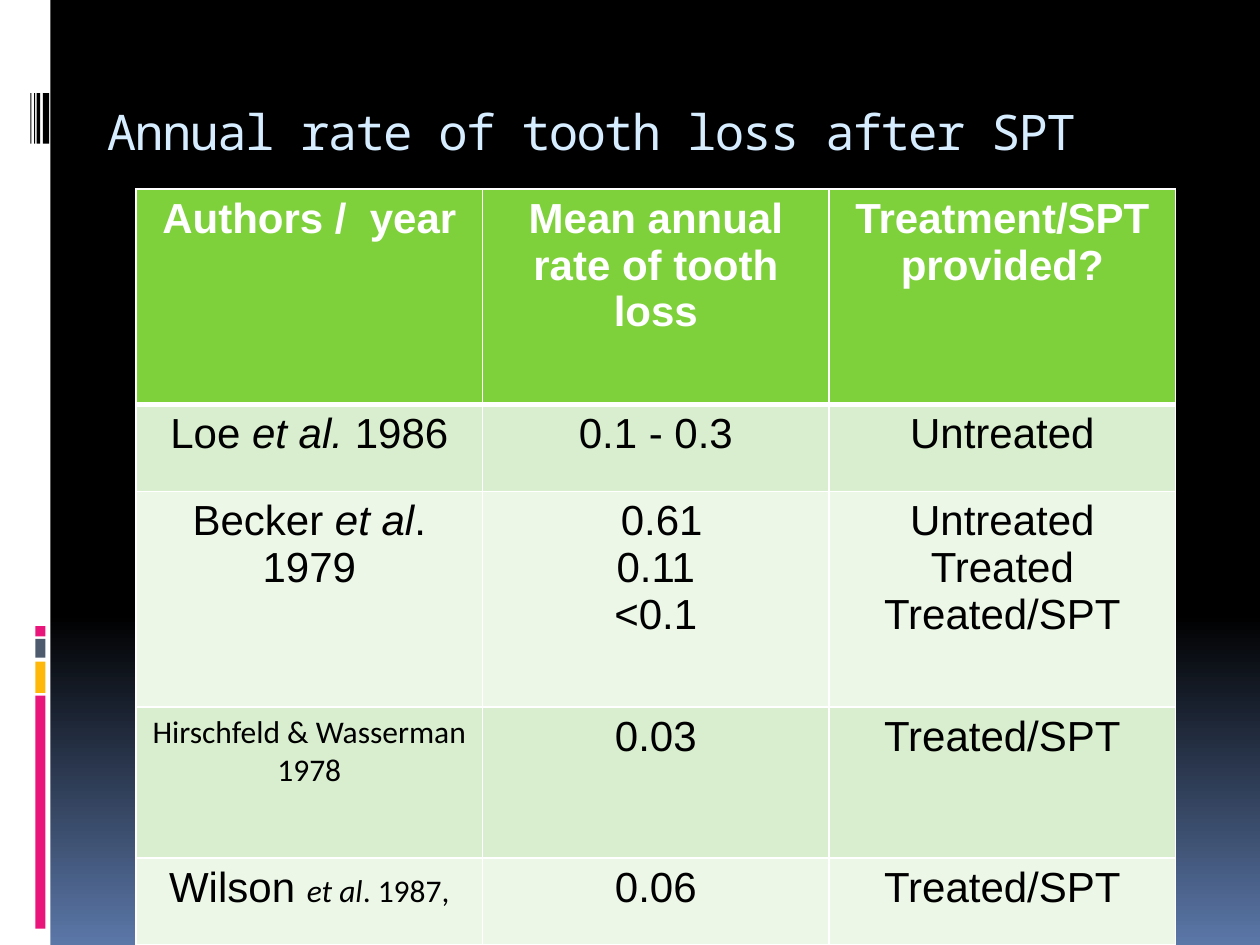
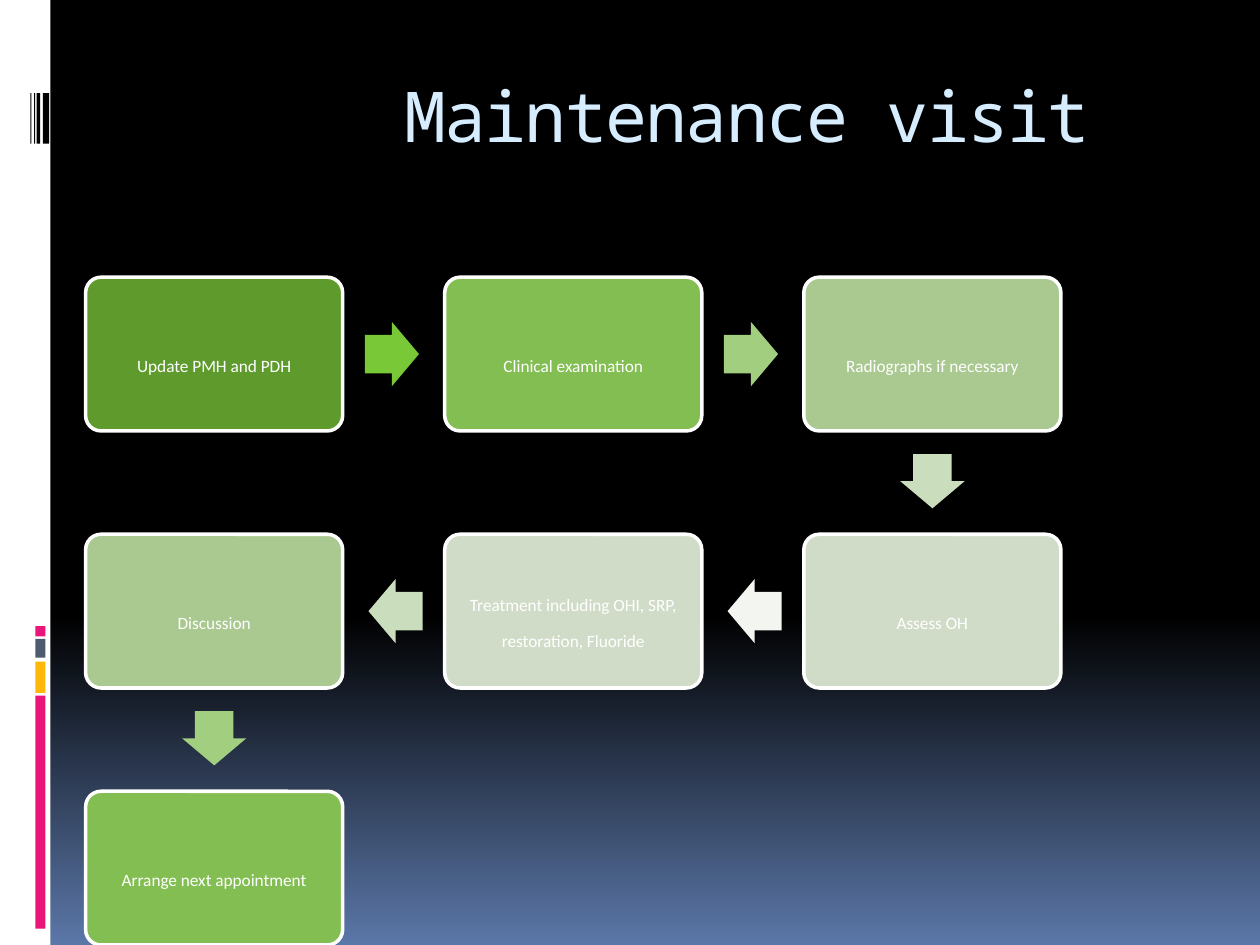
from pptx import Presentation
from pptx.dml.color import RGBColor
from pptx.enum.shapes import MSO_SHAPE
from pptx.enum.text import MSO_ANCHOR, PP_ALIGN
from pptx.oxml import parse_xml
from pptx.oxml.ns import nsdecls
from pptx.util import Inches, Pt

RECT = MSO_SHAPE.RECTANGLE
ROUNDED = MSO_SHAPE.ROUNDED_RECTANGLE
ARROW = MSO_SHAPE.RIGHT_ARROW
MIDDLE = MSO_ANCHOR.MIDDLE
CENTER = PP_ALIGN.CENTER

COLORS = {
    "white": "FFFFFF", "black": "000000", "sky": "5B77A8", "title": "D6ECFF",
    "pink": "EA157A", "amber": "FEB80A", "slate": "4E5B6F",
    "header": "7FD13B", "band": "D8EECE", "band_light": "ECF7E8",
    "green1": "5E9B2C", "green2": "82BE52", "green3": "A9C990", "green4": "D0DCC7",
    "arrow1": "79C838", "arrow2": "A2CE7F", "arrow3": "CADDBC", "arrow4": "F3F5F0",
}
TITLE_FONT = "Noto Sans Mono"
BODY = ("Arial", 24)
SMALL = ("Calibri", 18)

RAIL_BARS = [
    (0, 0, 0.4, 7.5, "white"),
    (0.28, 5.52, 0.08, 1.85, "pink"),
    (0.28, 5.25, 0.08, 0.25, "amber"),
    (0.28, 5.07, 0.08, 0.15, "slate"),
    (0.28, 4.97, 0.08, 0.08, "pink"),
    (0.34, 0.74, 0.05, 0.4, "black"),
    (0.29, 0.74, 0.03, 0.4, "black"),
    (0.27, 0.74, 0.01, 0.4, "black"),
    (0.24, 0.74, 0.01, 0.4, "black"),
]

COL_WIDTH = 2.75
ROW_HEIGHTS = [1.71, 0.69, 1.71, 1.2, 0.69]
ROWS = [
    ["Authors /  year", "Mean annual rate of tooth loss", "Treatment/SPT provided?"],
    [[("Loe ", BODY, False), ("et al. ", BODY, True), ("1986", BODY, False)],
     "0.1 - 0.3", "Untreated"],
    [[("Becker ", BODY, False), ("et al", BODY, True), (". 1979", BODY, False)],
     " 0.61\n0.11\n<0.1", "Untreated\nTreated\nTreated/SPT"],
    [[("Hirschfeld & Wasserman 1978", SMALL, False)], "0.03", "Treated/SPT"],
    [[("Wilson ", BODY, False), ("et al", SMALL, True), (". 1987,", SMALL, False)],
     "0.06", "Treated/SPT"],
]

STEPS = [
    ("Update PMH and PDH", "green1"),
    ("Clinical examination", "green2"),
    ("Radiographs if necessary", "green3"),
    ("Assess OH", "green4"),
    ("Treatment including OHI, SRP, restoration, Fluoride", "green4"),
    ("Discussion", "green3"),
    ("Arrange next appointment", "green2"),
]
ARROW_COLORS = ["arrow1", "arrow2", "arrow3", "arrow4", "arrow3", "arrow2"]
PER_ROW = 3
STEP_W, STEP_H = 2.04, 1.22
PITCH_X, PITCH_Y = 2.85, 2.04
ARROW_W, ARROW_H = 0.43, 0.51


def rgb(name):
    return RGBColor.from_string(COLORS[name])


def add_shape(s, kind, x, y, w, h, color):
    sp = s.shapes.add_shape(kind, Inches(x), Inches(y), Inches(w), Inches(h))
    sp.shadow.inherit = False
    sp.fill.solid()
    sp.fill.fore_color.rgb = rgb(color)
    sp.line.fill.background()
    return sp


def add_base(prs):
    s = prs.slides.add_slide(prs.slide_layouts[6])
    fill = s.background.fill
    fill.gradient()
    fill.gradient_angle = 270
    for stop, position, color in zip(fill.gradient_stops, (0.65, 1), ("black", "sky")):
        stop.position = position
        stop.color.rgb = rgb(color)
    for x, y, w, h, color in RAIL_BARS:
        add_shape(s, RECT, x, y, w, h, color)
    return s


def add_title(s, text, x, y, w, size):
    tf = s.shapes.add_textbox(Inches(x), Inches(y), Inches(w), Inches(0.78)).text_frame
    tf.word_wrap = True
    tf.vertical_anchor = MIDDLE
    p = tf.paragraphs[0]
    p.font.name = TITLE_FONT
    p.font.size = Pt(size)
    p.font.color.rgb = rgb("title")
    r = p.add_run()
    r.text = text
    r._r.get_or_add_rPr().set("spc", "-100")


def set_borders(cell, bottom):
    tcPr = cell._tc.get_or_add_tcPr()
    for i, (side, width) in enumerate((("L", 1), ("R", 1), ("T", 1), ("B", bottom))):
        tcPr.insert(i, parse_xml(
            f'<a:ln{side} {nsdecls("a")} w="{Pt(width)}"><a:solidFill>'
            f'<a:srgbClr val="{COLORS["white"]}"/></a:solidFill></a:ln{side}>'))


def fill_cell(cell, content, is_header, color):
    cell.fill.solid()
    cell.fill.fore_color.rgb = rgb(color)
    set_borders(cell, 3 if is_header else 1)
    tf = cell.text_frame
    if isinstance(content, str):
        tf.text = content
    else:
        for text, (name, size), italic in content:
            r = tf.paragraphs[0].add_run()
            r.text = text
            r.font.name = name
            r.font.size = Pt(size)
            r.font.italic = italic
    for p in tf.paragraphs:
        p.alignment = CENTER
        p.font.name = BODY[0]
        p.font.size = Pt(BODY[1])
        p.font.bold = is_header
        p.font.color.rgb = rgb("white" if is_header else "black")


def add_loss_table(s, x, y):
    n_cols = len(ROWS[0])
    table = s.shapes.add_table(len(ROWS), n_cols, Inches(x), Inches(y),
                               Inches(COL_WIDTH * n_cols), Inches(sum(ROW_HEIGHTS))).table
    for col in table.columns:
        col.width = Inches(COL_WIDTH)
    for i, (height, row) in enumerate(zip(ROW_HEIGHTS, ROWS)):
        table.rows[i].height = Inches(height)
        color = "header" if i == 0 else ("band_light", "band")[i % 2]
        for j, content in enumerate(row):
            fill_cell(table.cell(i, j), content, i == 0, color)


def add_step(s, text, x, y, color):
    sp = add_shape(s, ROUNDED, x, y, STEP_W, STEP_H, color)
    sp.adjustments[0] = 0.1
    sp.line.color.rgb = rgb("white")
    sp.line.width = Pt(2)
    tf = sp.text_frame
    tf.word_wrap = True
    tf.vertical_anchor = MIDDLE
    tf.margin_left = tf.margin_right = tf.margin_top = tf.margin_bottom = Inches(0.07)
    p = tf.paragraphs[0]
    p.alignment = CENTER
    p.line_spacing = 0.9
    p.space_after = Pt(6)
    p.font.name = "Calibri"
    p.font.size = Pt(17)
    p.font.color.rgb = rgb("white")
    r = p.add_run()
    r.text = text
    r._r.get_or_add_rPr().set("baseline", "-25000")


def add_arrow(s, start, end, color):
    (x1, y1), (x2, y2) = start, end
    x = x1 + (x2 - x1) * 0.495 + (STEP_W - ARROW_W) / 2
    y = y1 + (y2 - y1) * 0.495 + (STEP_H - ARROW_H) / 2
    sp = add_shape(s, ARROW, x, y, ARROW_W, ARROW_H, color)
    sp.adjustments[0] = 0.6
    sp.adjustments[1] = 0.5
    sp.rotation = 90 if y2 > y1 else 180 if x2 < x1 else 0


def add_visit_flow(s, x, y):
    corners = []
    for k in range(len(STEPS)):
        row, i = divmod(k, PER_ROW)
        col = PER_ROW - 1 - i if row % 2 else i
        corners.append((x + col * PITCH_X, y + row * PITCH_Y))
    for (text, color), (left, top) in zip(STEPS, corners):
        add_step(s, text, left, top, color)
    for start, end, color in zip(corners, corners[1:], ARROW_COLORS):
        add_arrow(s, start, end, color)


def main():
    prs = Presentation()
    prs.slide_width = Inches(10)
    prs.slide_height = Inches(7.5)

    s = add_base(prs)
    add_title(s, "Annual rate of tooth loss after SPT", 0.75, 0.65, 9.2, 28)
    add_loss_table(s, 1.08, 1.5)

    s = add_base(prs)
    add_title(s, "Maintenance visit", 3.11, 0.52, 6.8, 40)
    add_visit_flow(s, 0.68, 2.2)

    prs.save("out.pptx")


if __name__ == "__main__":
    main()
